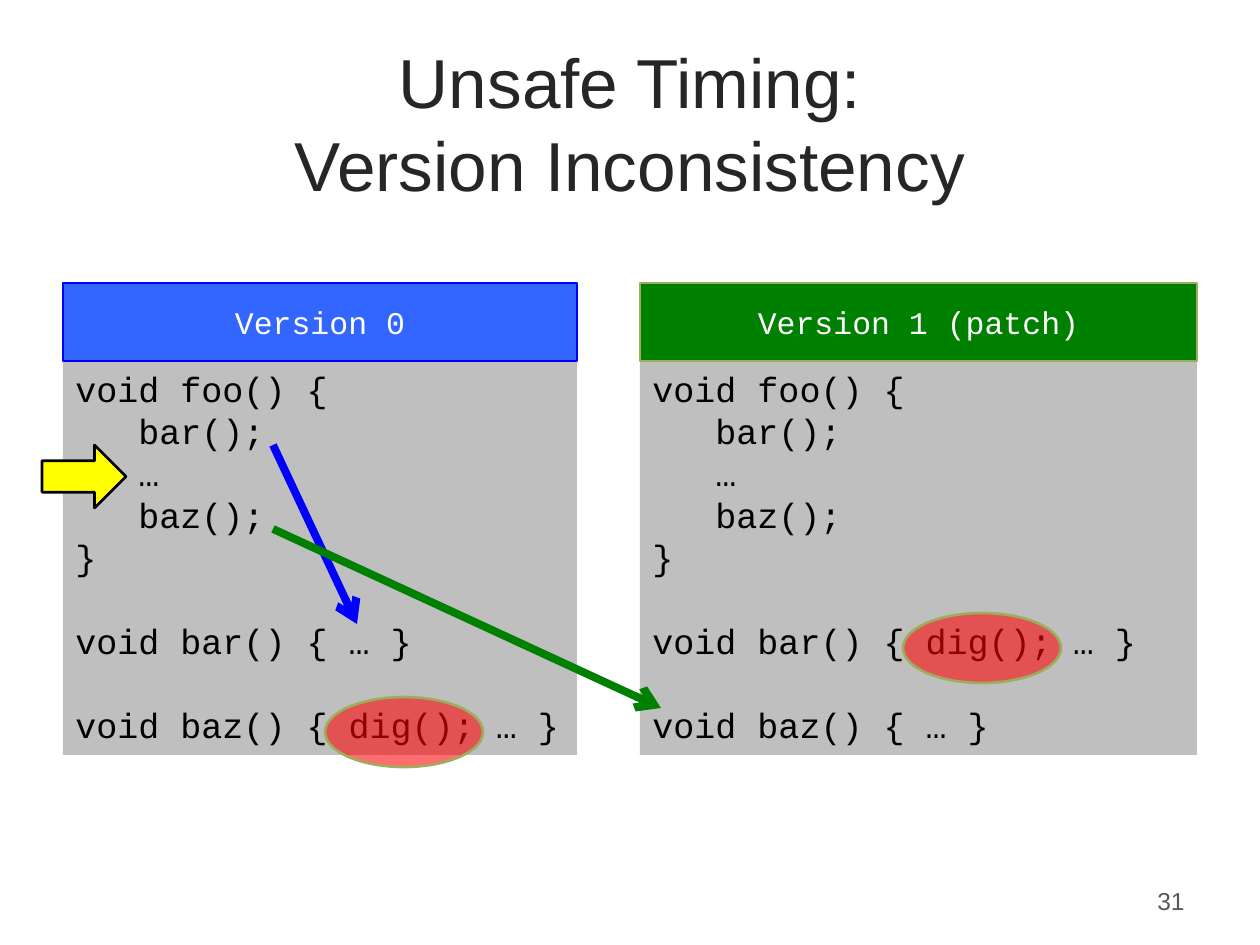
from dataclasses import dataclass

from lxml import etree
from pptx import Presentation
from pptx.dml.color import RGBColor
from pptx.enum.shapes import MSO_CONNECTOR, MSO_SHAPE
from pptx.enum.text import MSO_ANCHOR, PP_ALIGN
from pptx.oxml.ns import qn
from pptx.util import Emu, Pt

RECTANGLE, ELLIPSE, RIGHT_ARROW = MSO_SHAPE.RECTANGLE, MSO_SHAPE.OVAL, MSO_SHAPE.RIGHT_ARROW
STRAIGHT = MSO_CONNECTOR.STRAIGHT
LEFT, CENTER, RIGHT = PP_ALIGN.LEFT, PP_ALIGN.CENTER, PP_ALIGN.RIGHT
TOP, MIDDLE = MSO_ANCHOR.TOP, MSO_ANCHOR.MIDDLE

PX_PER_INCH = 126
CODE_FONT, TEXT_FONT = "Courier New", "Arial"
BLUE, GREEN, OLIVE = "0000FF", "008000", "9CAE5C"
HEADER_TOP, HEADER_HEIGHT, CODE_HEIGHT = 283, 78, 394
CODE_LINE = 24  # points
CODE_INDENT = 63  # px, three characters


@dataclass(frozen=True)
class Box:
    left: int
    top: int
    width: int
    height: int


@dataclass(frozen=True)
class Version:
    name: str
    left: int
    width: int
    fill: str
    line: str
    bar_body: str
    baz_body: str


@dataclass(frozen=True)
class Call:
    start: tuple[int, int]
    end: tuple[int, int]
    color: str


VERSIONS = [
    Version("Version 0", 63, 514, "3366FF", BLUE, "…", "dig(); …"),
    Version("Version 1 (patch)", 640, 557, GREEN, OLIVE, "dig(); …", "…"),
]
CALLS = [
    Call((273, 445), (357, 624), BLUE),
    Call((273, 529), (661, 708), GREEN),
]
DIG_MARKS = [Box(903, 613, 158, 70), Box(325, 697, 158, 70)]


def px(length: int) -> Emu:
    return Emu(round(length * 914400 / PX_PER_INCH))


def place(box: Box) -> tuple[Emu, Emu, Emu, Emu]:
    return px(box.left), px(box.top), px(box.width), px(box.height)


def rgb(color: str) -> RGBColor:
    return RGBColor.from_string(color)


def format_text(shape, font: str, size: float, color: str, align, anchor) -> None:
    text_frame = shape.text_frame
    text_frame.word_wrap = True
    text_frame.vertical_anchor = anchor
    for paragraph in text_frame.paragraphs:
        paragraph.alignment = align
        for run in paragraph.runs:
            run.font.name = font
            run.font.size = Pt(size)
            run.font.color.rgb = rgb(color)


def add_shape(slide, kind, box: Box, fill: str, line: str | None = None):
    shape = slide.shapes.add_shape(kind, *place(box))
    shape.shadow.inherit = False
    shape.fill.solid()
    shape.fill.fore_color.rgb = rgb(fill)
    if line:
        shape.line.color.rgb = rgb(line)
        shape.line.width = Pt(1.5)
    else:
        shape.line.fill.background()
    return shape


def add_code(shape, version: Version) -> None:
    """Write the three functions, set apart by one line of space."""
    lines = [
        "void foo() {", "bar();", "…", "baz();", "}",
        f"void bar() {{ {version.bar_body} }}",
        f"void baz() {{ {version.baz_body} }}",
    ]
    shape.text_frame.text = "\n".join(lines)
    for index, paragraph in enumerate(shape.text_frame.paragraphs):
        paragraph.line_spacing = Pt(CODE_LINE)
        if 1 <= index <= 3:
            paragraph._p.get_or_add_pPr().set("marL", str(px(CODE_INDENT)))
        elif index >= 5:
            paragraph.space_before = Pt(CODE_LINE)
    format_text(shape, CODE_FONT, 20, "000000", LEFT, TOP)


def add_version(slide, version: Version) -> None:
    code_box = Box(version.left, HEADER_TOP + HEADER_HEIGHT, version.width, CODE_HEIGHT)
    add_code(add_shape(slide, RECTANGLE, code_box, "BFBFBF"), version)
    header_box = Box(version.left, HEADER_TOP, version.width, HEADER_HEIGHT)
    header = add_shape(slide, RECTANGLE, header_box, version.fill, version.line)
    header.text_frame.text = version.name
    format_text(header, CODE_FONT, 18, "FFFFFF", CENTER, MIDDLE)


def add_call(slide, call: Call) -> None:
    connector = slide.shapes.add_connector(
        STRAIGHT, *map(px, call.start), *map(px, call.end)
    )
    connector.line.color.rgb = rgb(call.color)
    connector.line.width = Pt(4.5)
    etree.SubElement(connector.line._get_or_add_ln(), qn("a:tailEnd"), type="arrow")
    etree.SubElement(connector._element.spPr, qn("a:effectLst"))


def add_dig_mark(slide, box: Box) -> None:
    mark = add_shape(slide, ELLIPSE, box, "FF0000", OLIVE)
    color = mark._element.spPr.find(qn("a:solidFill"))[0]
    etree.SubElement(color, qn("a:alpha"), val="57000")


def add_title(slide) -> None:
    title = slide.shapes.title
    title.left, title.top, title.width, title.height = place(Box(100, 43, 1060, 158))
    title.text_frame.text = "Unsafe Timing:\vVersion Inconsistency"
    title.text_frame.paragraphs[0].line_spacing = Pt(47.5)
    format_text(title, TEXT_FONT, 39.6, "262626", CENTER, MIDDLE)


def add_slide_number(slide) -> None:
    number = slide.shapes.add_textbox(*place(Box(903, 876, 294, 50)))
    number.text_frame.text = "31"
    format_text(number, TEXT_FONT, 14, "595959", RIGHT, MIDDLE)


def main() -> None:
    presentation = Presentation()
    presentation.slide_width, presentation.slide_height = px(1260), px(945)
    slide = presentation.slides.add_slide(presentation.slide_layouts[5])
    add_title(slide)
    for version in VERSIONS:
        add_version(slide, version)
    blue_call, green_call = CALLS
    add_call(slide, blue_call)
    for box in DIG_MARKS:
        add_dig_mark(slide, box)
    add_call(slide, green_call)
    add_shape(slide, RIGHT_ARROW, Box(42, 445, 84, 63), "FFFF00", "000000")
    add_slide_number(slide)
    presentation.save("out.pptx")


if __name__ == "__main__":
    main()
